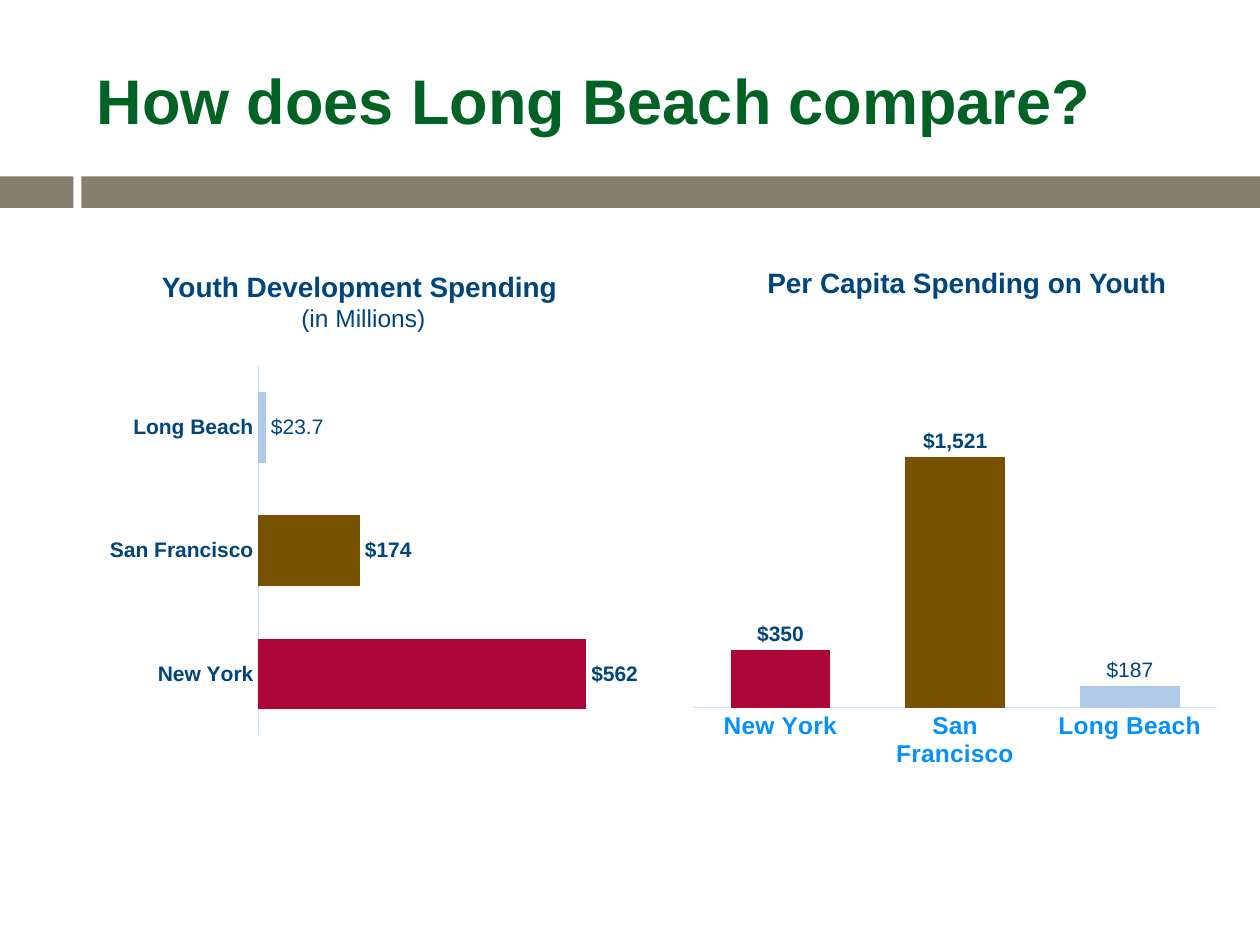
from lxml import etree
from pptx import Presentation, util as u
from pptx.chart import data as chart_data
from pptx.dml import color
from pptx.enum import chart as ch, shapes, text
from pptx.oxml import ns

COLORS = {"band": "887E6E", "title": "006225", "navy": "00457C", "sky": "0490FF",
          "axis": "C5E5FF", "New York": "AB0635", "San Francisco": "785200",
          "Long Beach": "B0CBEA"}
CITIES = ["New York", "San Francisco", "Long Beach"]


class SlideBuilder:
    """Holds the style and the current slide, and draws each kind of element in points."""

    font_name = "Arial"

    def __init__(self, slide):
        self.slide = slide

    def rgb(self, name):
        return color.RGBColor.from_string(COLORS[name])

    def style(self, font, size, tint, bold=True):
        font.name, font.size, font.bold = self.font_name, u.Pt(size), bold
        font.color.rgb = self.rgb(tint)

    def add_run(self, paragraph, wording, size, tint, bold=True):
        run = paragraph.add_run()
        run.text = wording
        self.style(run.font, size, tint, bold)

    def title(self, box, wording):
        heading = self.slide.shapes.title
        heading.left, heading.top, heading.width, heading.height = map(u.Pt, box)
        heading.text_frame.vertical_anchor = text.MSO_ANCHOR.MIDDLE
        paragraph = heading.text_frame.paragraphs[0]
        paragraph.alignment = text.PP_ALIGN.LEFT
        self.add_run(paragraph, wording, 36, "title")

    def band(self, box):
        bar = self.slide.shapes.add_shape(shapes.MSO_SHAPE.RECTANGLE, *map(u.Pt, box))
        bar.shadow.inherit = False
        bar.fill.solid()
        bar.fill.fore_color.rgb = self.rgb("band")
        bar.line.fill.background()

    def caption(self, box, lines):
        frame = self.slide.shapes.add_textbox(*map(u.Pt, box)).text_frame
        frame.word_wrap = True
        for index, (wording, size, bold) in enumerate(lines):
            paragraph = frame.add_paragraph() if index else frame.paragraphs[0]
            paragraph.alignment = text.PP_ALIGN.CENTER
            self.add_run(paragraph, wording, size, "navy", bold)

    def plot_layout(self, chart, area):
        plot_area = chart.element.find(".//" + ns.qn("c:plotArea"))
        for old in plot_area.findall(ns.qn("c:layout")):
            plot_area.remove(old)
        layout = etree.Element(ns.qn("c:layout"))
        manual = etree.SubElement(layout, ns.qn("c:manualLayout"))
        settings = [("layoutTarget", "inner"), ("xMode", "edge"), ("yMode", "edge")]
        for tag, value in settings + list(zip("xywh", area)):
            etree.SubElement(manual, ns.qn(f"c:{tag}")).set("val", str(value))
        plot_area.insert(0, layout)

    def bars(self, kind, box, area, spending, top_value, city_size, city_tint, beach_label):
        source = chart_data.CategoryChartData()
        source.categories = CITIES
        source.add_series("Series 1", spending)
        chart = self.slide.shapes.add_chart(kind, *map(u.Pt, box), source).chart
        chart.has_legend = chart.has_title = False
        self.style(chart.font, 10, "navy", False)
        self.plot_layout(chart, area)

        amounts = chart.value_axis
        amounts.minimum_scale, amounts.maximum_scale = 0, top_value
        amounts.has_major_gridlines = amounts.visible = False
        cities = chart.category_axis
        cities.major_tick_mark = cities.minor_tick_mark = ch.XL_TICK_MARK.NONE
        cities.format.line.color.rgb = self.rgb("axis")
        cities.format.line.width = u.Pt(0.75)
        self.style(cities.tick_labels.font, city_size, city_tint)

        plot = chart.plots[0]
        plot.gap_width, plot.vary_by_categories = 75, False
        series = plot.series[0]
        series.invert_if_negative = False
        for index, city in enumerate(CITIES):
            fill = series.points[index].format.fill
            fill.solid()
            fill.fore_color.rgb = self.rgb(city)

        labels = series.data_labels
        labels.show_value = True
        labels.number_format, labels.number_format_is_linked = '"$"#,##0', False
        labels.position = ch.XL_LABEL_POSITION.OUTSIDE_END
        self.style(labels.font, 12, "navy")
        beach = series.points[CITIES.index("Long Beach")].data_label
        self.add_run(beach.text_frame.paragraphs[0], beach_label, 12, "navy", False)
        beach.position = ch.XL_LABEL_POSITION.OUTSIDE_END


def main():
    deck = Presentation()
    deck.slide_width, deck.slide_height = u.Pt(720), u.Pt(540)
    builder = SlideBuilder(deck.slides.add_slide(deck.slide_layouts[5]))
    for left, width in ((0, 42), (46.5, 673.5)):
        builder.band((left, 100.8, width, 18))
    builder.title((48, 18, 642, 78), "How does Long Beach compare?")
    builder.bars(ch.XL_CHART_TYPE.BAR_CLUSTERED, (50.4, 198, 333.4, 246.2),
                 (0.292, 0.045, 0.6, 0.858), (562, 174, 13), 600, 12, "navy", "$23.7")
    builder.bars(ch.XL_CHART_TYPE.COLUMN_CLUSTERED, (383, 216, 327, 222.5),
                 (0.04, 0.171, 0.916, 0.685), (350, 1521, 132), 1600, 14, "sky", "$187")
    builder.caption((50.4, 150.5, 314.6, 44),
                    [("Youth Development Spending ", 16, True), ("(in Millions)", 14, False)])
    builder.caption((395.3, 148.3, 314.6, 26.6), [("Per Capita Spending on Youth", 16, True)])
    deck.save("out.pptx")


if __name__ == "__main__":
    main()
